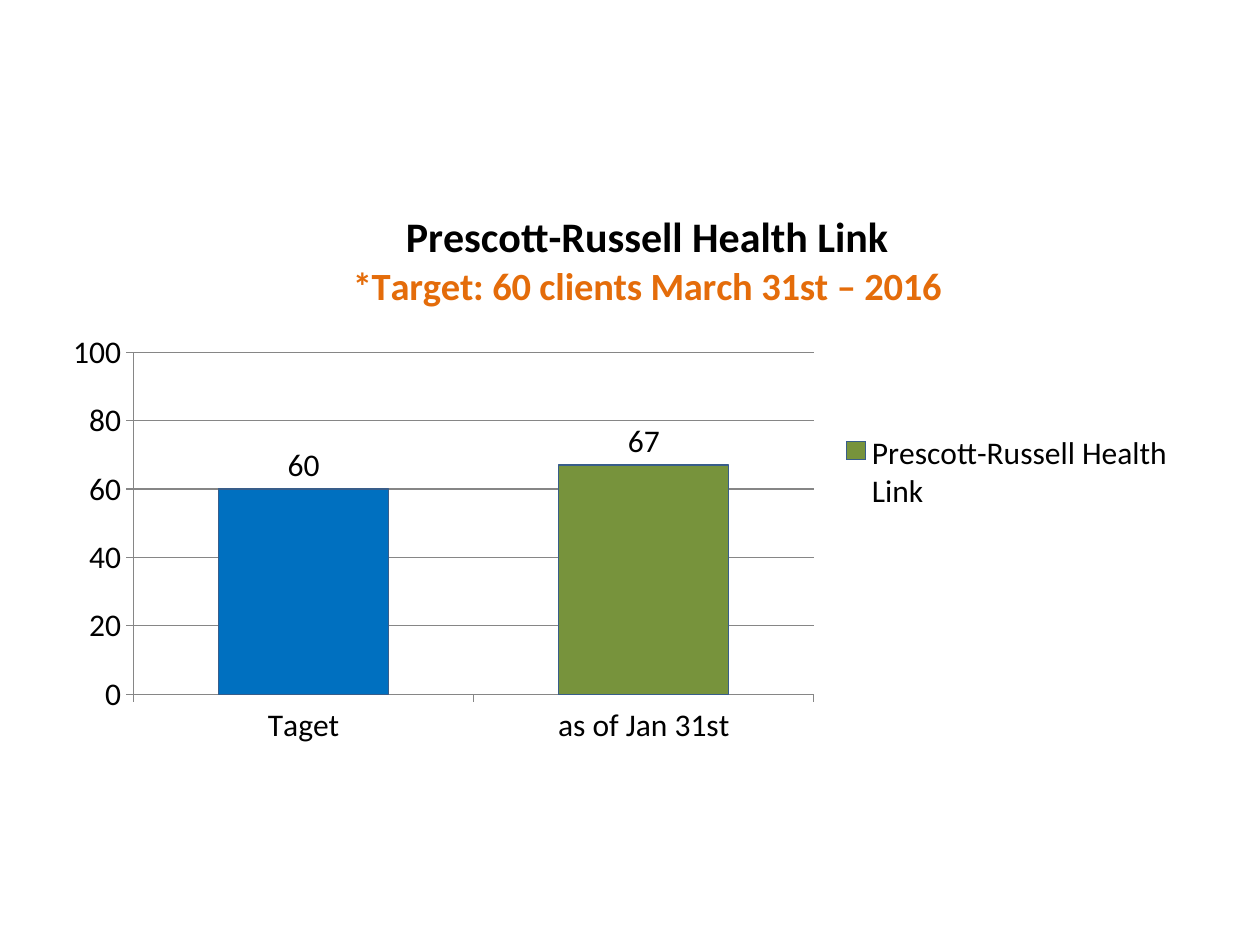
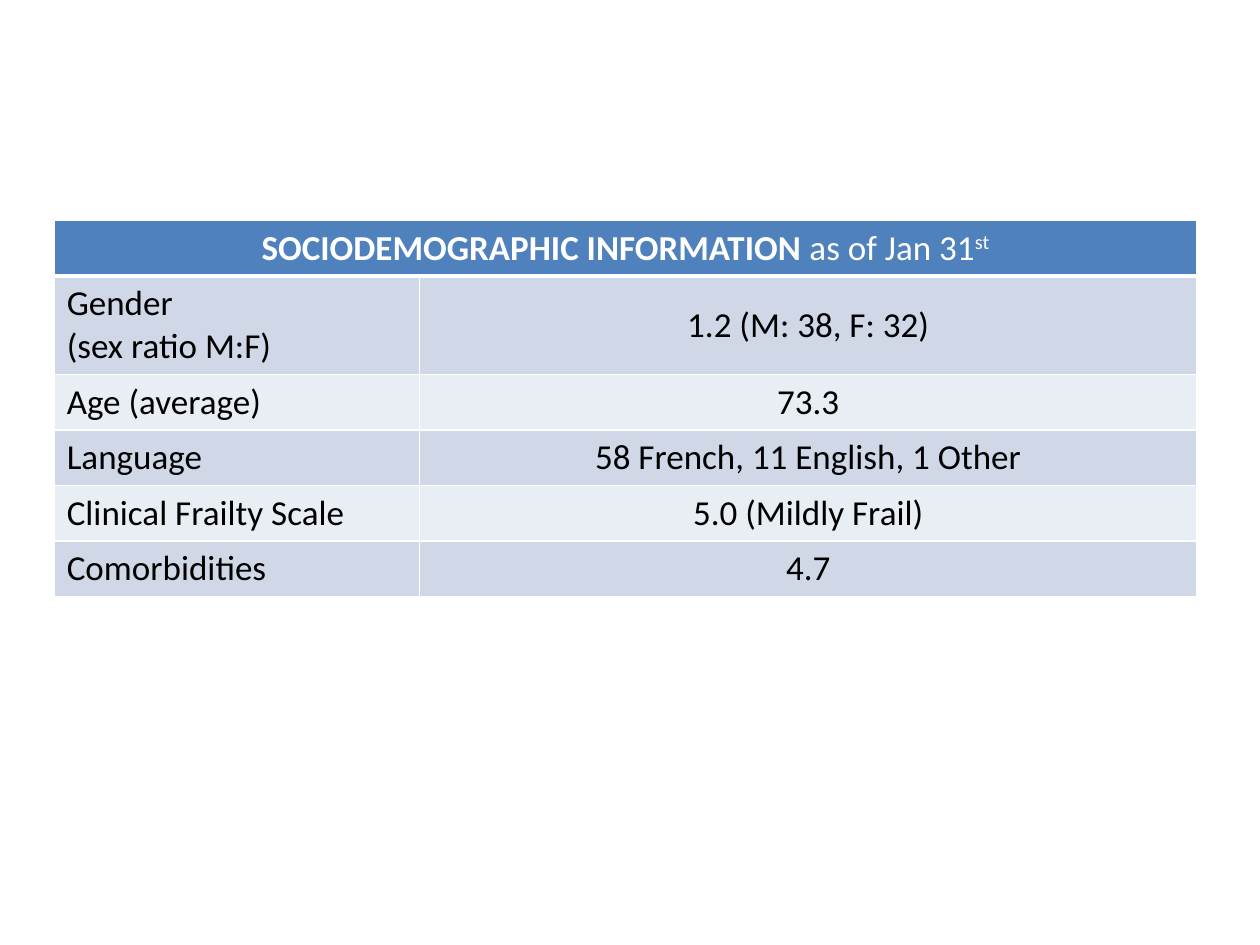
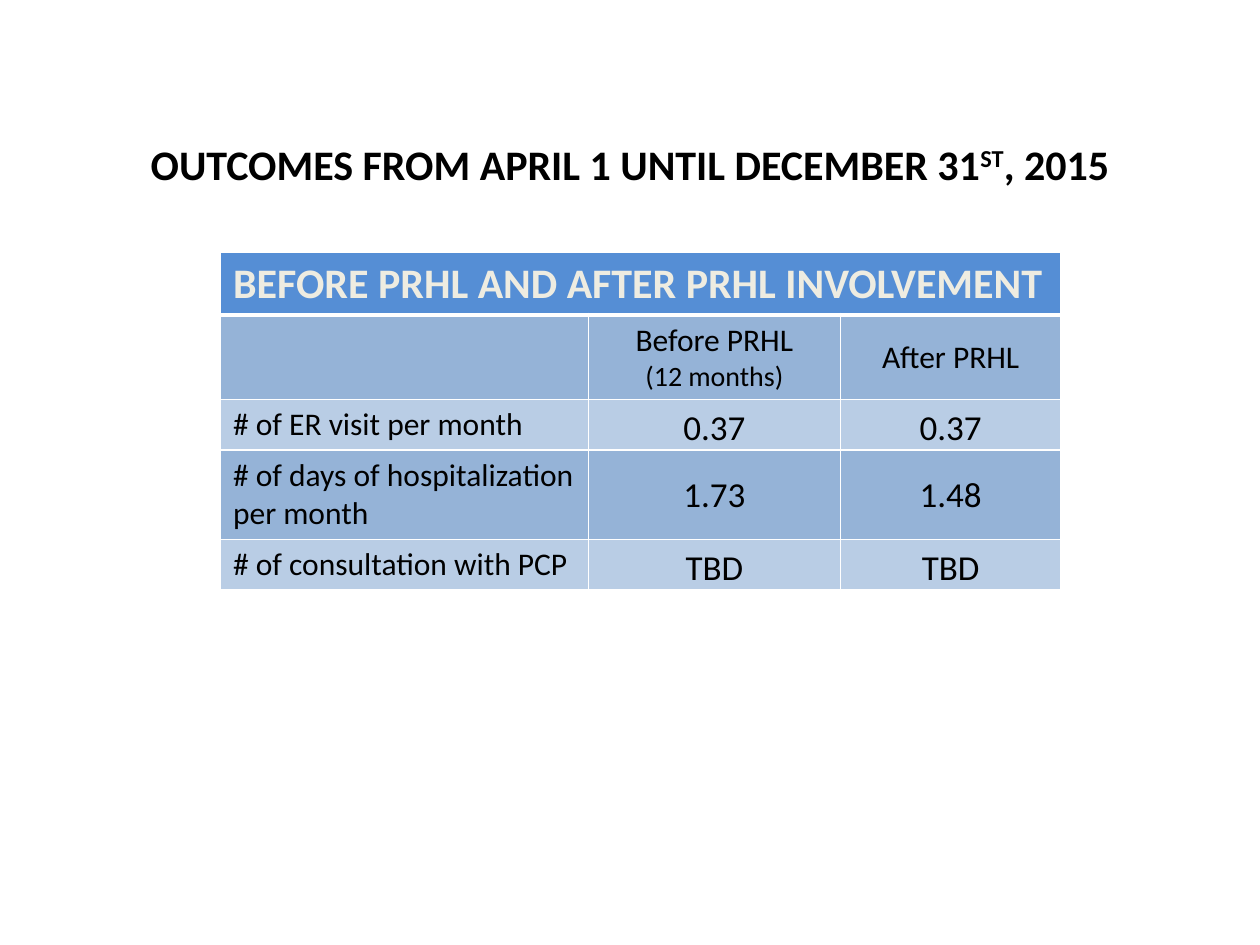
import dataclasses

import lxml.etree
import pptx
import pptx.chart.data
import pptx.dml.color
import pptx.enum.chart
import pptx.enum.text
import pptx.oxml
import pptx.oxml.ns
import pptx.util

COLUMNS, ROWS = 100, 75
ALIGN = pptx.enum.text.PP_ALIGN
ANCHOR = pptx.enum.text.MSO_ANCHOR
qn = pptx.oxml.ns.qn


@dataclasses.dataclass(frozen=True)
class Theme:
    font: str = "Calibri"
    title: float = 24
    subtitle: float = 22
    body: float = 20
    label: float = 18
    note: float = 16
    black: str = "000000"
    white: str = "FFFFFF"
    cream: str = "EEECE1"
    orange: str = "E46C0A"
    target_bar: str = "0070C0"
    actual_bar: str = "77933C"
    bar_edge: str = "385D8A"
    rule: str = "868686"
    demographic_header: str = "4F81BD"
    demographic_bands: tuple = ("D0D8E8", "E9EDF4")
    outcome_header: str = "558ED5"
    outcome_bands: tuple = ("95B3D7", "B9CDE5")


THEME = Theme()


@dataclasses.dataclass(frozen=True)
class Words:
    text: str
    size: float = THEME.body
    color: str = THEME.black
    bold: bool = False
    raised: bool = False


@dataclasses.dataclass(frozen=True)
class Box:
    left: int
    top: int
    width: int
    height: int

    def shape_args(self):
        return self.left, self.top, self.width, self.height


def grid_box(deck, column, row, columns, rows):
    across, down = deck.slide_width / COLUMNS, deck.slide_height / ROWS
    return Box(round(column * across), round(row * down), round(columns * across), round(rows * down))


def rgb(color):
    return pptx.dml.color.RGBColor.from_string(color)


def style_font(font, size, color, bold=False):
    font.name = THEME.font
    font.size = pptx.util.Pt(size)
    font.bold = bold
    font.color.rgb = rgb(color)


def write(frame, paragraphs, align):
    for index, pieces in enumerate(paragraphs):
        paragraph = frame.add_paragraph() if index else frame.paragraphs[0]
        paragraph.alignment = align
        for piece in pieces:
            run = paragraph.add_run()
            run.text = piece.text
            style_font(run.font, piece.size, piece.color, piece.bold)
            if piece.raised:
                run.font._element.set("baseline", "30000")


def set_layout(element, position, **shares):
    for old in element.findall(qn("c:layout")):
        element.remove(old)
    layout = pptx.oxml.parse_xml(f'<c:layout {pptx.oxml.ns.nsdecls("c")}><c:manualLayout/></c:layout>')
    for tag, value in shares.items():
        lxml.etree.SubElement(layout[0], qn(f"c:{tag}")).set("val", str(value))
    element.insert(position, layout)


def draw_line(line, color, points=0.75):
    line.color.rgb = rgb(color)
    line.width = pptx.util.Pt(points)


def client_chart(slide, box):
    clients = pptx.chart.data.CategoryChartData()
    clients.categories = ["Taget", "as of Jan 31st"]
    clients.add_series("Prescott-Russell Health Link", (60, 67))
    chart = slide.shapes.add_chart(
        pptx.enum.chart.XL_CHART_TYPE.COLUMN_CLUSTERED, *box.shape_args(), clients).chart
    style_font(chart.font, THEME.label, THEME.black)

    chart.has_title = True
    write(chart.chart_title.text_frame, [
        [Words("Prescott-Russell Health Link", THEME.title, bold=True)],
        [Words("*Target: 60 clients March 31st – 2016", THEME.subtitle, THEME.orange, True)],
    ], ALIGN.CENTER)
    set_layout(chart.chart_title._element, 1, xMode="edge", yMode="edge", x=0.26, y=0.02)

    chart.has_legend = True
    chart.legend.position = pptx.enum.chart.XL_LEGEND_POSITION.RIGHT
    chart.legend.include_in_layout = False
    set_layout(chart.legend._element, 1, xMode="edge", yMode="edge", x=0.69, y=0.42, w=0.3, h=0.15)

    plot = chart.plots[0]
    plot.gap_width = 100
    plot.vary_by_categories = False
    plot.has_data_labels = True
    plot.data_labels.show_value = True
    plot.data_labels.position = pptx.enum.chart.XL_LABEL_POSITION.OUTSIDE_END
    style_font(plot.data_labels.font, THEME.label, THEME.black)
    set_layout(chart._chartSpace.chart.plotArea, 0, layoutTarget="inner",
               xMode="edge", yMode="edge", x=0.07, y=0.28, w=0.6, h=0.61)

    series = plot.series[0]
    series.invert_if_negative = False
    target = series.points[0]
    for bar, color in ((series, THEME.actual_bar), (target, THEME.target_bar)):
        bar.format.fill.solid()
        bar.format.fill.fore_color.rgb = rgb(color)
        draw_line(bar.format.line, THEME.bar_edge)

    scale = chart.value_axis
    scale.minimum_scale, scale.maximum_scale, scale.major_unit = 0, 100, 20
    scale.has_major_gridlines = True
    draw_line(scale.major_gridlines.format.line, THEME.rule)
    for axis in (scale, chart.category_axis):
        axis.major_tick_mark = pptx.enum.chart.XL_TICK_MARK.OUTSIDE
        draw_line(axis.format.line, THEME.rule)


def heading(slide, box, pieces):
    frame = slide.shapes.add_textbox(*box.shape_args()).text_frame
    frame.word_wrap = True
    frame.vertical_anchor = ANCHOR.MIDDLE
    write(frame, [pieces], ALIGN.CENTER)


def border_cell(cell, top, bottom):
    properties = cell._tc.get_or_add_tcPr()
    for side, points in (("L", 1), ("R", 1), ("T", top), ("B", bottom)):
        edge = lxml.etree.SubElement(properties, qn(f"a:ln{side}"), w=str(pptx.util.Pt(points)))
        paint = lxml.etree.SubElement(edge, qn("a:solidFill"))
        lxml.etree.SubElement(paint, qn("a:srgbClr"), val=THEME.white)


def banded_table(slide, box, column_shares, row_shares, header_fill, bands):
    table = slide.shapes.add_table(len(row_shares), len(column_shares), *box.shape_args()).table
    table.first_row = table.horz_banding = False
    for column, share in zip(table.columns, column_shares):
        column.width = round(box.width * share / sum(column_shares))
    for index, (row, share) in enumerate(zip(table.rows, row_shares)):
        row.height = round(box.height * share / sum(row_shares))
        for cell in row.cells:
            border_cell(cell, 3 if index == 1 else 1, 3 if index == 0 else 1)
            cell.fill.solid()
            cell.fill.fore_color.rgb = rgb(bands[(index - 1) % 2] if index else header_fill)
    table.cell(0, 0).merge(table.cell(0, len(column_shares) - 1))
    return table


def fill_cell(cell, paragraphs, align=ALIGN.LEFT, anchor=ANCHOR.TOP):
    cell.vertical_anchor = anchor
    write(cell.text_frame, paragraphs, align)


def demographics_table(slide, box):
    table = banded_table(slide, box, (2.9, 6.17), (0.43, 0.78, 0.43, 0.43, 0.43, 0.43),
                         THEME.demographic_header, THEME.demographic_bands)
    fill_cell(table.cell(0, 0), [[
        Words("SOCIODEMOGRAPHIC INFORMATION ", color=THEME.white, bold=True),
        Words("as of Jan 31", color=THEME.white),
        Words("st", color=THEME.white, raised=True),
    ]], ALIGN.CENTER)
    facts = [
        (("Gender", "(sex ratio M:F)"), "1.2 (M: 38, F: 32)"),
        (("Age (average)",), "73.3"),
        (("Language",), "58 French, 11 English, 1 Other"),
        (("Clinical Frailty Scale",), "5.0 (Mildly Frail)"),
        (("Comorbidities",), "4.7"),
    ]
    for row, (topic, finding) in enumerate(facts, 1):
        fill_cell(table.cell(row, 0), [[Words(line)] for line in topic])
        fill_cell(table.cell(row, 1), [[Words(finding)]], ALIGN.CENTER, ANCHOR.MIDDLE)


def outcomes_table(slide, box):
    table = banded_table(slide, box, (2.92, 2, 1.75), (0.5, 0.67, 0.4, 0.71, 0.4),
                         THEME.outcome_header, THEME.outcome_bands)
    fill_cell(table.cell(0, 0), [[
        Words("BEFORE PRHL AND AFTER PRHL INVOLVEMENT", THEME.title, THEME.cream, True)]])
    periods = [
        [[Words("Before PRHL", THEME.label)], [Words("(12 months)", THEME.note)]],
        [[Words("After PRHL", THEME.label)]],
    ]
    for column, period in enumerate(periods, 1):
        fill_cell(table.cell(1, column), period, ALIGN.CENTER, ANCHOR.MIDDLE)
    measures = [
        ("# of ER visit per month", ("0.37", "0.37"), ANCHOR.BOTTOM),
        ("# of days of hospitalization per month", ("1.73", "1.48"), ANCHOR.MIDDLE),
        ("# of consultation with PCP", ("TBD", "TBD"), ANCHOR.BOTTOM),
    ]
    for row, (measure, results, anchor) in enumerate(measures, 2):
        fill_cell(table.cell(row, 0), [[Words(measure, THEME.label)]])
        for column, result in enumerate(results, 1):
            cell = table.cell(row, column)
            cell.margin_left = cell.margin_right = cell.margin_top = pptx.util.Inches(0.01)
            cell.margin_bottom = 0
            fill_cell(cell, [[Words(result)]], ALIGN.CENTER, anchor)


def main():
    deck = pptx.Presentation()
    deck.slide_width, deck.slide_height = pptx.util.Inches(10), pptx.util.Inches(7.5)
    progress, demographics, outcomes = (
        deck.slides.add_slide(deck.slide_layouts[6]) for _ in range(3))

    client_chart(progress, grid_box(deck, 4.3, 15.5, 90, 44.5))
    demographics_table(demographics, grid_box(deck, 4.3, 17.5, 90.7, 29.3))
    heading(outcomes, grid_box(deck, 5, 6.7, 90, 12.5), [
        Words("OUTCOMES FROM APRIL 1 UNTIL DECEMBER 31", THEME.title, bold=True),
        Words("ST", THEME.title, bold=True, raised=True),
        Words(", 2015", THEME.title, bold=True),
    ])
    outcomes_table(outcomes, grid_box(deck, 17.5, 20, 66.7, 26.8))
    deck.save("out.pptx")


if __name__ == "__main__":
    main()
